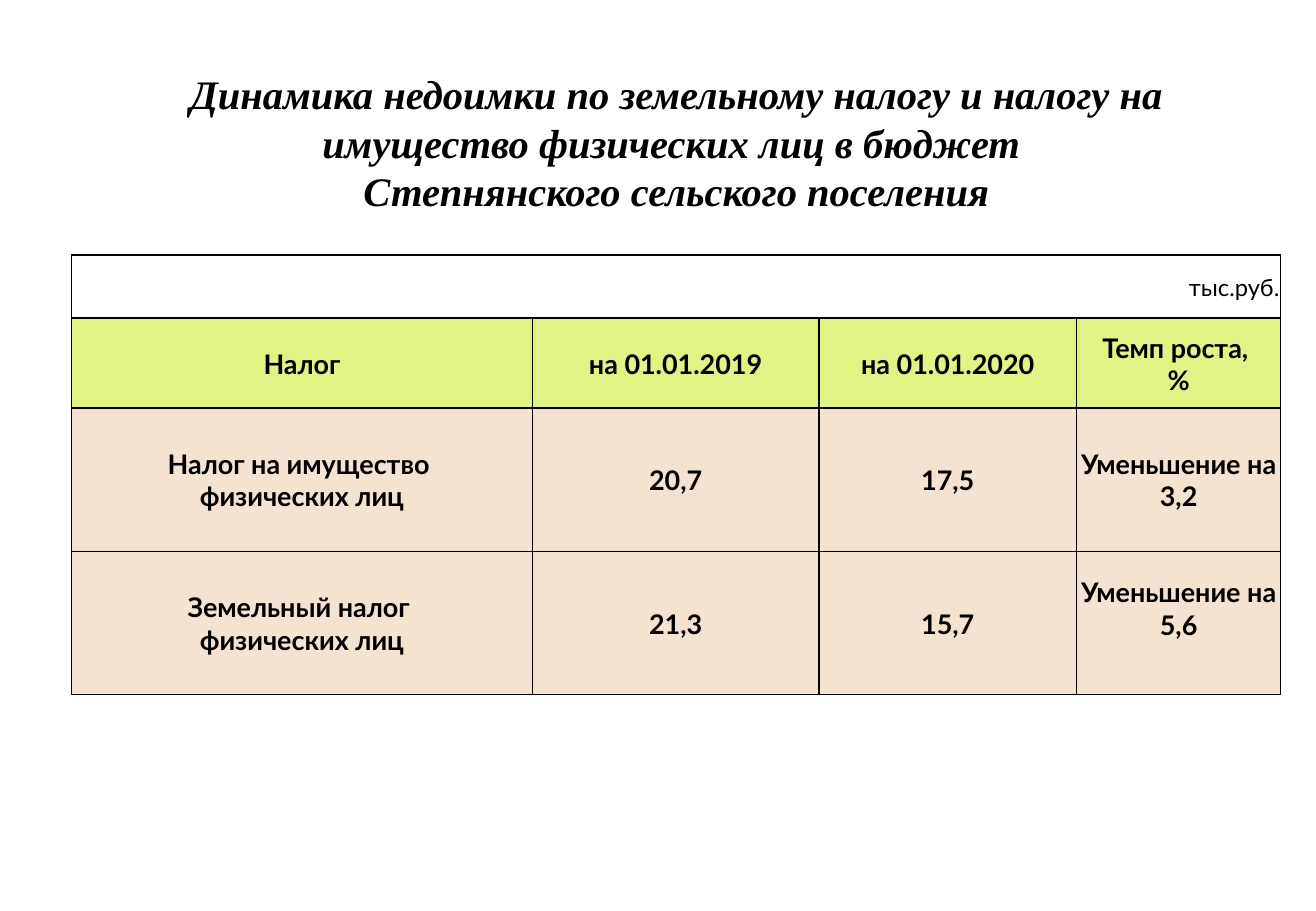
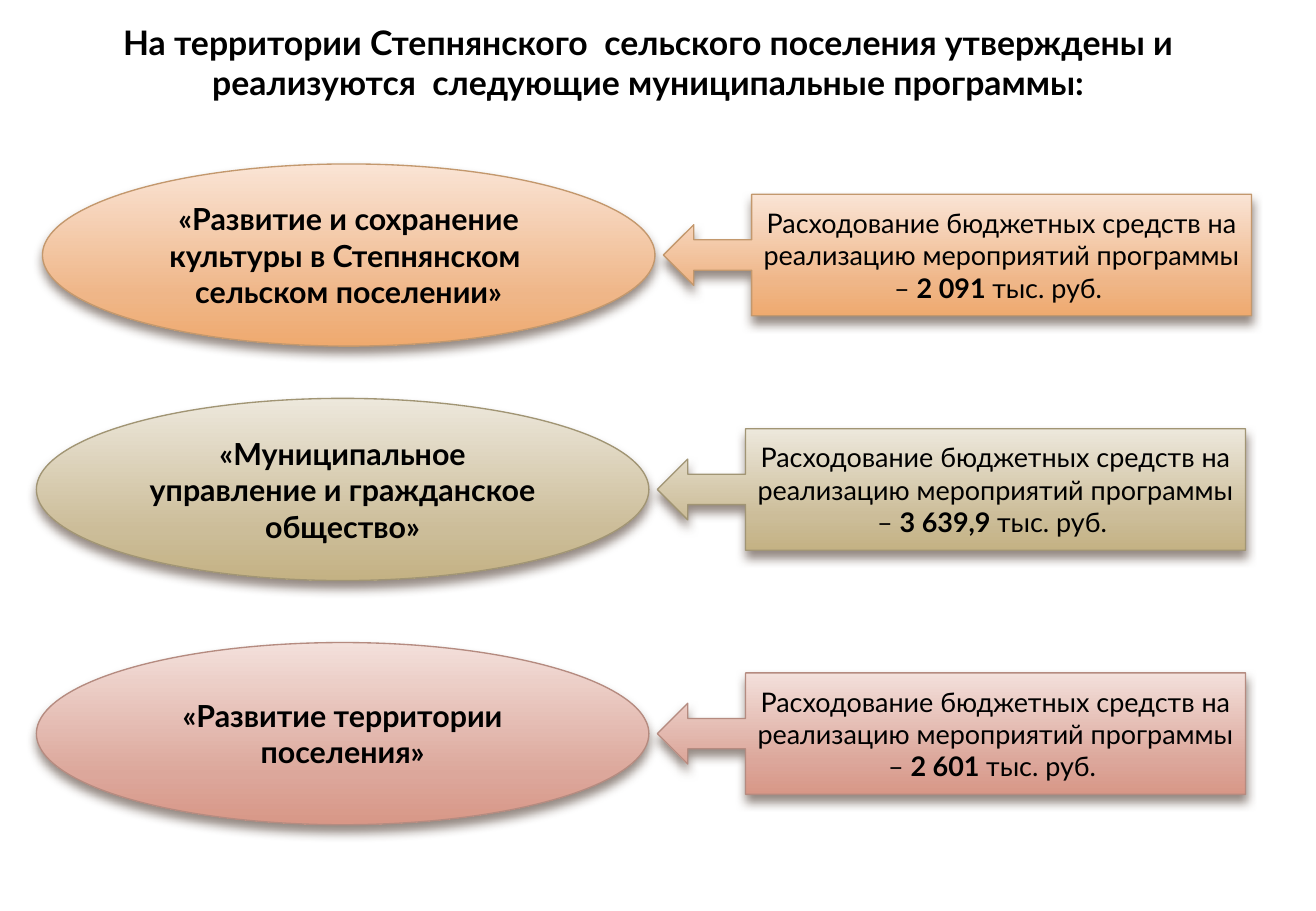
from lxml import etree
from pptx import Presentation
from pptx.dml.color import RGBColor
from pptx.enum.shapes import MSO_SHAPE
from pptx.enum.text import MSO_ANCHOR, PP_ALIGN
from pptx.oxml import parse_xml
from pptx.oxml.ns import nsdecls, qn
from pptx.util import Inches, Pt

BODY_FONT = "Lato"
TITLE_FONT = "Times New Roman"
BLACK = "000000"
HEADER_FILL = "E1F385"
ROW_FILL = "F5E3D1"
SHADOW = "4E3B30"


def color(value):
    return RGBColor.from_string(value)


def write(frame, paragraphs, size, bold=None, italic=None, font=BODY_FONT,
          align=PP_ALIGN.CENTER):
    """Fill a text frame; each paragraph is a list of (text, bold) runs or a string."""
    frame.word_wrap = True
    for index, content in enumerate(paragraphs):
        paragraph = frame.paragraphs[0] if index == 0 else frame.add_paragraph()
        paragraph.alignment = align
        paragraph.font.name, paragraph.font.size = font, Pt(size)
        paragraph.font.bold, paragraph.font.italic = bold, italic
        paragraph.font.color.rgb = color(BLACK)
        runs = [(content, None)] if isinstance(content, str) else content
        for text, run_bold in runs:
            run = paragraph.add_run()
            run.text = text
            if run_bold:
                run.font.bold = True


prs = Presentation()
prs.slide_width, prs.slide_height = Inches(10.83), Inches(7.5)
blank = prs.slide_layouts[6]

# Slide 1: tax arrears
arrears = prs.slides.add_slide(blank)
title = arrears.shapes.add_textbox(Inches(1.09), Inches(0.52), Inches(8.95), Inches(1.31))
write(title.text_frame,
      ["Динамика недоимки по земельному налогу и налогу на имущество физических лиц в бюджет ",
       "Степнянского сельского поселения"],
      24, bold=True, italic=True, font=TITLE_FONT)

rows = [
    [["тыс.руб."], [], [], []],
    [["Налог"], ["на 01.01.2019"], ["на 01.01.2020"], ["Темп роста, ", "%"]],
    [["Налог на имущество ", "физических лиц"], ["20,7"], ["17,5"], ["Уменьшение на 3,2"]],
    [["Земельный налог ", "физических лиц"], ["21,3"], ["15,7"], ["Уменьшение на 5,6"]],
]
table = arrears.shapes.add_table(4, 4, Inches(0.59), Inches(2.1),
                                 Inches(9.95), Inches(3.62)).table
table.first_row = table.horz_banding = False
for column, width in zip(table.columns, (3.79, 2.36, 2.12, 1.68)):
    column.width = Inches(width)
for row, height in zip(table.rows, (0.52, 0.74, 1.18, 1.18)):
    row.height = Inches(height)
table.cell(0, 0).merge(table.cell(0, 3))

for r, row in enumerate(rows):
    for c, lines in enumerate(row):
        cell = table.cell(r, c)
        cell.vertical_anchor = MSO_ANCHOR.MIDDLE
        cell.margin_left = cell.margin_right = cell.margin_top = Inches(0.01)
        cell.margin_bottom = 0
        for side in ("lnL", "lnR", "lnT", "lnB"):
            border = etree.SubElement(cell._tc.get_or_add_tcPr(), qn(f"a:{side}"), w=str(Pt(1)))
            line_fill = etree.SubElement(border, qn("a:solidFill"))
            etree.SubElement(line_fill, qn("a:srgbClr"), val=BLACK)
        if r == 0:
            cell.fill.background()
            write(cell.text_frame, lines, 14, align=PP_ALIGN.RIGHT)
        else:
            cell.fill.solid()
            cell.fill.fore_color.rgb = color(HEADER_FILL if r == 1 else ROW_FILL)
            write(cell.text_frame, lines, 16, bold=True)
table.cell(3, 3).margin_bottom = Inches(0.25)  # last growth value sits above the middle

# Slide 2: municipal programmes
programmes = prs.slides.add_slide(blank)
heading = programmes.shapes.add_textbox(Inches(0.14), Inches(0.13), Inches(10.39), Inches(0.77))
write(heading.text_frame,
      ["На территории Степнянского  сельского поселения утверждены и реализуются  "
       "следующие муниципальные программы:"], 20, bold=True)

# name, amount, left, top, gradient colours, outline
programme_list = [
    ("«Развитие и сохранение культуры в Степнянском  сельском поселении»", "2 091 ",
     0.35, 1.35, ("FAE4D5", "EFB688", "EFAA6F"), "C3986D"),
    ("«Муниципальное управление и гражданское общество»", "3 639,9 ",
     0.3, 3.28, ("EDE8DC", "CCBD99", "C4B284"), "A19574"),
    ("«Развитие территории поселения»", "2 601 ",
     0.3, 5.29, ("F3E0DB", "DCA79B", "D89787"), "B58B80"),
]
for name, amount, left, top, gradient, outline in programme_list:
    programme = programmes.shapes.add_shape(
        MSO_SHAPE.OVAL, Inches(left), Inches(top), Inches(5.04), Inches(1.5))
    spending = programmes.shapes.add_shape(
        MSO_SHAPE.LEFT_ARROW_CALLOUT, Inches(left + 5.11), Inches(top + 0.25),
        Inches(4.84), Inches(1))
    for index, share in enumerate((0.25, 0.25, 0.25, 0.85)):
        spending.adjustments[index] = share

    stops = "".join(f'<a:gs pos="{pos}000"><a:srgbClr val="{tone}"/></a:gs>'
                    for pos, tone in zip((0, 72, 100), gradient))
    for shape in (programme, spending):
        shape.line.color.rgb = color(outline)
        shape.line.width = Pt(0.79)
        shape.fill.gradient()
        properties = shape.element.spPr
        properties.replace(properties.find(qn("a:gradFill")), parse_xml(
            f'<a:gradFill {nsdecls("a")} rotWithShape="1"><a:gsLst>{stops}</a:gsLst>'
            '<a:lin ang="5400000" scaled="0"/></a:gradFill>'))
        shape.shadow.inherit = False
        properties.find(qn("a:effectLst")).append(parse_xml(
            f'<a:outerShdw {nsdecls("a")} blurRad="{Pt(6)}" dist="{Pt(4)}" dir="5400000" '
            f'rotWithShape="0"><a:srgbClr val="{SHADOW}"><a:alpha val="60000"/></a:srgbClr>'
            '</a:outerShdw>'))
        shape.text_frame.vertical_anchor = MSO_ANCHOR.MIDDLE

    write(programme.text_frame, [name], 18, bold=True)
    write(spending.text_frame,
          [[("Расходование бюджетных средств на реализацию мероприятий программы – ", False),
            (amount, True), ("тыс. руб. ", False)]], 16)

prs.save("out.pptx")
